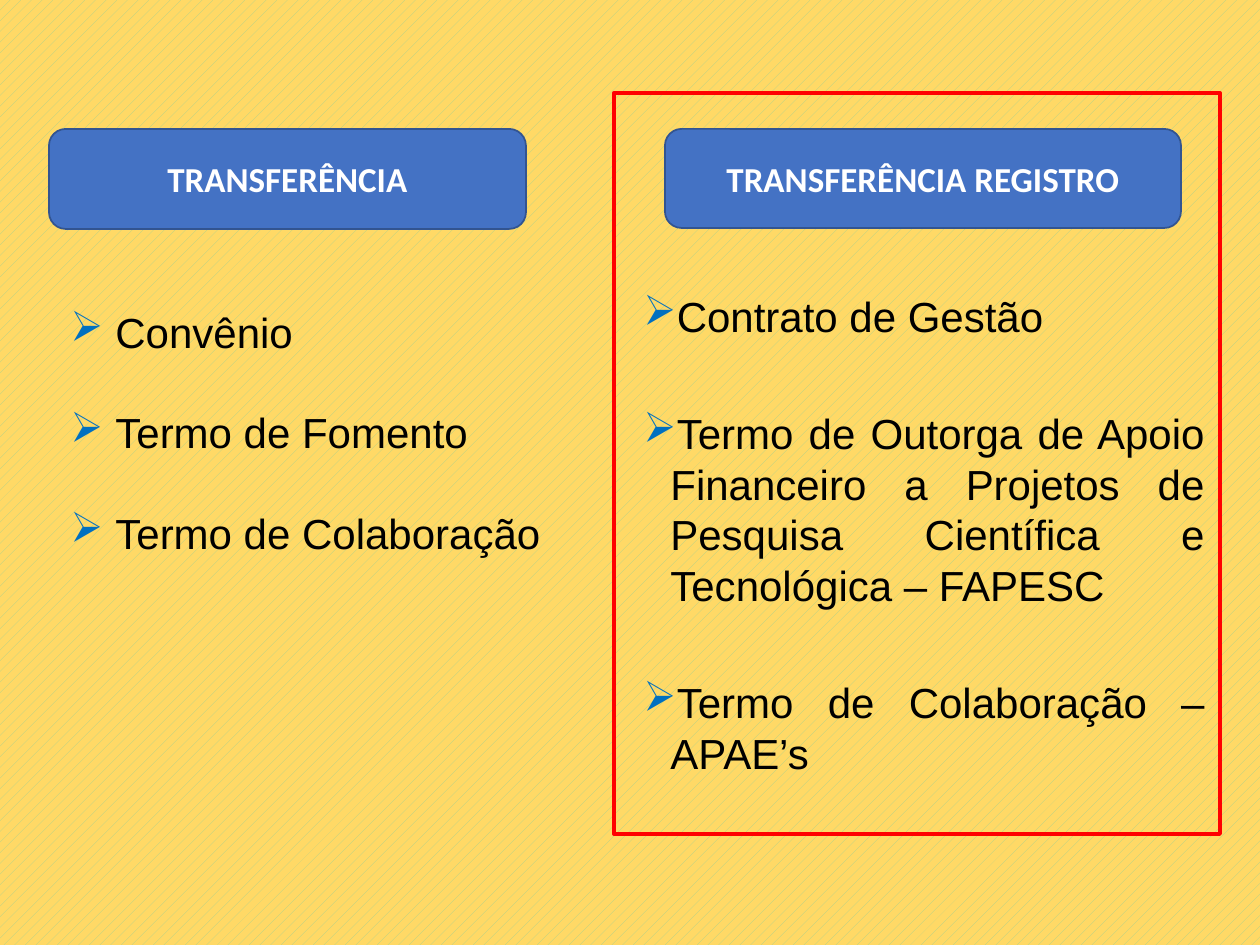
from lxml.etree import SubElement as Sub
from pptx import Presentation
from pptx.dml.color import RGBColor as RGB
from pptx.enum.dml import MSO_PATTERN as PAT
from pptx.enum.shapes import MSO_SHAPE as SHAPE
from pptx.enum.text import MSO_ANCHOR as ANCHOR, PP_ALIGN as ALIGN
from pptx.oxml.ns import qn
from pptx.util import Pt

PX = 914400 / 126


def px(*nums):
    return [round(n * PX) for n in nums]


def tint(color, code):
    color.rgb = RGB.from_string(code)


deck = Presentation()
deck.slide_width, deck.slide_height = px(1260, 945)
slide = deck.slides.add_slide(deck.slide_layouts[6])

back = slide.background.fill
back.patterned()
back.pattern = PAT.DASHED_UPWARD_DIAGONAL
tint(back.fore_color, "A9D18E")
tint(back.back_color, "FFD966")

heads = [
    ("TRANSFERÊNCIA", (49, 129, 477, 100)),
    ("TRANSFERÊNCIA REGISTRO", (665, 129, 516, 99)),
]
for words, place in heads:
    head = slide.shapes.add_shape(SHAPE.ROUNDED_RECTANGLE, *px(*place))
    head.shadow.inherit = False
    head.fill.solid()
    tint(head.fill.fore_color, "4472C4")
    tint(head.line.color, "325491")
    head.line.width = Pt(1)
    frame = head.text_frame
    frame.vertical_anchor = ANCHOR.MIDDLE
    para = frame.paragraphs[0]
    para.alignment = ALIGN.CENTER
    run = para.add_run()
    run.text = words
    run.font.name = "Calibri"
    run.font.size = Pt(20)
    run.font.bold = True
    tint(run.font.color, "FFFFFF")

LEFT, FULL = ALIGN.LEFT, ALIGN.JUSTIFY
lists = [
    ((58, 300, 500, 305), False, 45, 28.8, [
        ("Convênio", LEFT),
        ("Termo de Fomento", LEFT),
        ("Termo de Colaboração", LEFT),
    ]),
    ((631, 284, 586, 661), True, 27, 38.4, [
        ("Contrato de Gestão", LEFT),
        ("Termo de Outorga de Apoio Financeiro a Projetos de "
         "Pesquisa Científica e Tecnológica – FAPESC", FULL),
        ("Termo de Colaboração – APAE’s", FULL),
    ]),
]
for place, wrap, indent, gap, items in lists:
    frame = slide.shapes.add_textbox(*px(*place)).text_frame
    frame.word_wrap = wrap
    hang = px(indent)[0]
    for i, (words, align) in enumerate(items):
        para = frame.add_paragraph() if i else frame.paragraphs[0]
        para.alignment = align
        para.line_spacing = Pt(28.8)
        if i:
            para.space_before = Pt(gap)
        props = para._p.get_or_add_pPr()
        props.set("marL", str(hang))
        props.set("indent", str(-hang))
        Sub(Sub(props, qn("a:buClr")), qn("a:srgbClr"), val="0070C0")
        Sub(props, qn("a:buChar"), char="➢")
        run = para.add_run()
        run.text = words
        run.font.name = "Arial"
        run.font.size = Pt(24)
        tint(run.font.color, "000000")

frame = slide.shapes.add_shape(SHAPE.RECTANGLE, *px(614, 93, 606, 741))
frame.shadow.inherit = False
frame.fill.background()
tint(frame.line.color, "FF0000")
frame.line.width = Pt(2.25)

deck.save("out.pptx")
